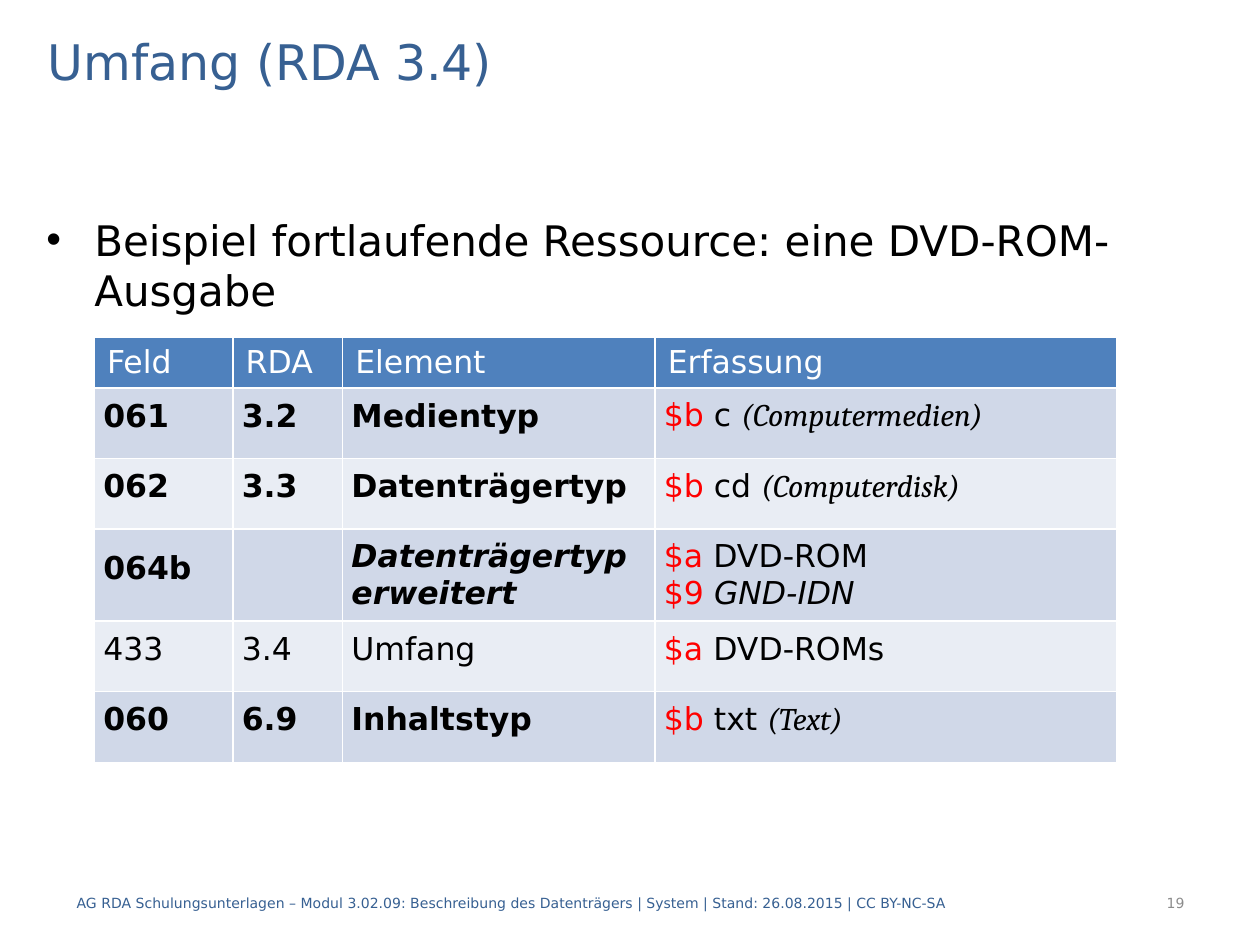
"""Build the slide on extent (RDA 3.4) with its cataloguing example table."""
from dataclasses import dataclass

from lxml import etree
from pptx import Presentation
from pptx.dml.color import RGBColor
from pptx.enum.text import MSO_ANCHOR, PP_ALIGN
from pptx.util import Inches, Pt

MIDDLE = MSO_ANCHOR.MIDDLE
TOP = MSO_ANCHOR.TOP
LEFT = PP_ALIGN.LEFT
RIGHT = PP_ALIGN.RIGHT
SANS = "DejaVu Sans"
SERIF = "Cambria"
COLORS = {
    "title": "376092", "text": "000000", "code": "FF0000", "number": "8C8C8C",
    "header_text": "FFFFFF", "header": "4F81BD", "odd": "D0D8E8", "even": "E9EDF4",
}
COLUMN_WIDTHS = (1.1, 0.87, 2.48, 3.66)
ROW_HEIGHTS = (0.38, 0.56, 0.56, 0.73, 0.56, 0.56)
HEADERS = ("Feld", "RDA", "Element", "Erfassung")


@dataclass(frozen=True)
class Run:
    text: str
    color: str = "text"
    size: float = 18
    font: str = SANS
    bold: bool = False
    italic: bool = False


@dataclass(frozen=True)
class Entry:
    field: str
    rule: str
    element: str
    recording: tuple[tuple[Run, ...], ...]
    bold: bool = True
    italic: bool = False
    compact: bool = True


@dataclass(frozen=True)
class Label:
    left: float
    top: float
    width: float
    height: float
    run: Run
    alignment: PP_ALIGN = LEFT


def code(text: str) -> Run:
    return Run(text, "code")


def remark(text: str) -> Run:
    return Run(text, font=SERIF, italic=True)


ENTRIES = (
    Entry("061", "3.2", "Medientyp", ((code("$b"), Run(" c "), remark("(Computermedien)")),)),
    Entry("062", "3.3", "Datenträgertyp", ((code("$b"), Run(" cd "), remark("(Computerdisk)")),)),
    Entry("064b", "", "Datenträgertyp erweitert",
          ((code("$a"), Run(" DVD-ROM")), (code("$9 "), Run("GND-IDN", italic=True))),
          italic=True, compact=False),
    Entry("433", "3.4", "Umfang", ((code("$a"), Run(" DVD-ROMs")),), bold=False),
    Entry("060", "6.9", "Inhaltstyp", ((code("$b "), Run("txt "), remark("(Text)")),)),
)
LABELS = (
    Label(0.51, 6.97, 8.66, 0.4, Run(
        "AG RDA Schulungsunterlagen – Modul 3.02.09: Beschreibung des Datenträgers"
        " | System | Stand: 26.08.2015 | CC BY-NC-SA", "title", 8)),
    Label(7.91, 6.97, 1.59, 0.4, Run("19", "number", 8), RIGHT),
)


def rgb(name: str) -> RGBColor:
    return RGBColor.from_string(COLORS[name])


def add_run(paragraph, content: Run) -> None:
    run = paragraph.add_run()
    run.text = content.text
    font = run.font
    font.name, font.size = content.font, Pt(content.size)
    font.bold, font.italic = content.bold, content.italic
    font.color.rgb = rgb(content.color)


def place(shape, left: float, top: float, width: float, height: float) -> None:
    shape.left, shape.top = Inches(left), Inches(top)
    shape.width, shape.height = Inches(width), Inches(height)


def add_title(slide) -> None:
    title = slide.shapes.title
    place(title, 0.28, 0.2, 9.45, 0.56)
    frame = title.text_frame
    frame.vertical_anchor = MIDDLE
    frame.paragraphs[0].alignment = LEFT
    add_run(frame.paragraphs[0], Run("Umfang (RDA 3.4)", "title", 28))


def add_label(slide, label: Label) -> None:
    box = slide.shapes.add_textbox(
        Inches(label.left), Inches(label.top), Inches(label.width), Inches(label.height))
    frame = box.text_frame
    frame.word_wrap = True
    frame.vertical_anchor = MIDDLE
    frame.paragraphs[0].alignment = label.alignment
    add_run(frame.paragraphs[0], label.run)


def add_bullet(slide) -> None:
    box = slide.shapes.add_textbox(Inches(0.27), Inches(0.92), Inches(9.45), Inches(5.98))
    frame = box.text_frame
    frame.word_wrap = True
    frame.vertical_anchor = TOP
    frame.margin_top = Inches(0.78)
    paragraph = frame.paragraphs[0]
    add_run(paragraph, Run("Beispiel fortlaufende Ressource: eine DVD-ROM-Ausgabe", size=24))
    properties = paragraph._p.get_or_add_pPr()
    properties.set("marL", str(Inches(0.38)))
    properties.set("indent", str(Inches(-0.38)))
    namespace = "{http://schemas.openxmlformats.org/drawingml/2006/main}"
    etree.SubElement(properties, f"{namespace}buFont", typeface="Arial")
    etree.SubElement(properties, f"{namespace}buChar", char="•")


def fill_cell(cell, fill: str, lines: tuple[tuple[Run, ...], ...]) -> None:
    cell.fill.solid()
    cell.fill.fore_color.rgb = rgb(fill)
    frame = cell.text_frame
    for index, runs in enumerate(lines):
        paragraph = frame.add_paragraph() if index else frame.paragraphs[0]
        for run in runs:
            add_run(paragraph, run)


def fill_entry(table, row: int, entry: Entry) -> None:
    columns = (
        ((Run(entry.field, bold=entry.bold),),),
        ((Run(entry.rule, bold=entry.bold),),) if entry.rule else (),
        ((Run(entry.element, bold=entry.bold, italic=entry.italic),),),
        entry.recording,
    )
    for column, lines in enumerate(columns):
        cell = table.cell(row, column)
        fill_cell(cell, "odd" if row % 2 else "even", lines)
        cell.vertical_anchor = MIDDLE
        cell.margin_left = cell.margin_right = Inches(0.07)
        cell.margin_top = cell.margin_bottom = 0
        if entry.compact or column == 0:
            for paragraph in cell.text_frame.paragraphs:
                paragraph.line_spacing = Pt(13)
                paragraph.space_after = Pt(6)


def add_entry_table(slide) -> None:
    table = slide.shapes.add_table(
        len(ROW_HEIGHTS), len(COLUMN_WIDTHS), Inches(0.75), Inches(2.68),
        Inches(sum(COLUMN_WIDTHS)), Inches(sum(ROW_HEIGHTS))).table
    for column, width in zip(table.columns, COLUMN_WIDTHS):
        column.width = Inches(width)
    for row, height in zip(table.rows, ROW_HEIGHTS):
        row.height = Inches(height)
    for column, header in enumerate(HEADERS):
        fill_cell(table.cell(0, column), "header", ((Run(header, "header_text"),),))
    for row, entry in enumerate(ENTRIES, start=1):
        fill_entry(table, row, entry)


def main() -> None:
    presentation = Presentation()
    presentation.slide_width, presentation.slide_height = Inches(10), Inches(7.5)
    slide = presentation.slides.add_slide(presentation.slide_layouts[5])
    add_title(slide)
    add_bullet(slide)
    add_entry_table(slide)
    for label in LABELS:
        add_label(slide, label)
    presentation.save("out.pptx")


if __name__ == "__main__":
    main()
